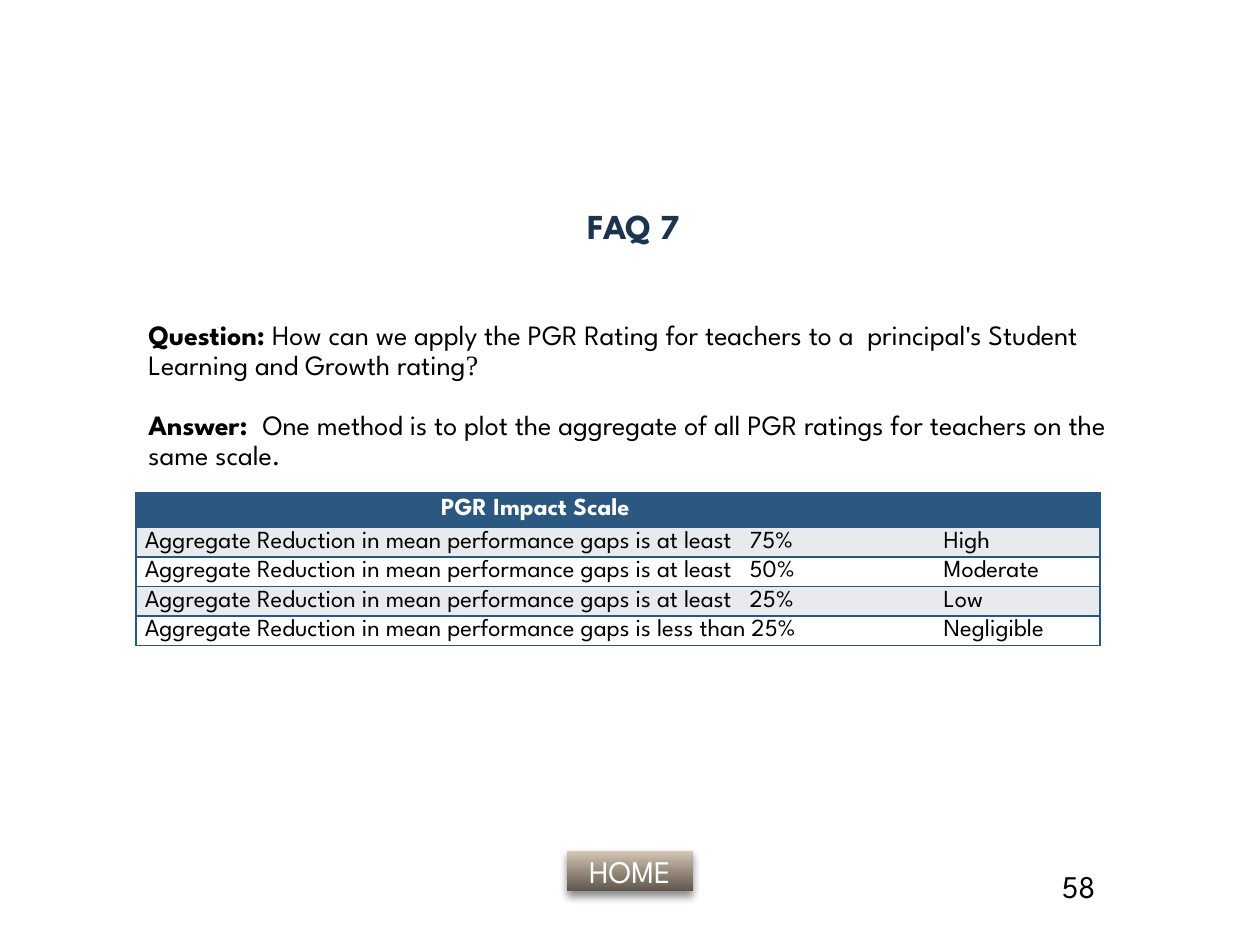
import pptx
import pptx.util
import pptx.dml.color
import pptx.enum.shapes
import pptx.enum.text
import pptx.oxml
from dataclasses import dataclass

Pt = pptx.util.Pt
Inches = pptx.util.Inches
ALIGN = pptx.enum.text.PP_ALIGN
ANCHOR = pptx.enum.text.MSO_ANCHOR
NS = 'xmlns:a="http://schemas.openxmlformats.org/drawingml/2006/main"'


@dataclass(frozen=True)
class Theme:
    font: str = "League Spartan"
    alt_font: str = "Times New Roman"
    black: str = "000000"
    white: str = "FFFFFF"
    navy: str = "1A354D"
    blue: str = "2B5880"
    band: str = "E8EAED"
    button: tuple = ((0, "5F574E"), (50, "988C7E"), (70, "B2A596"), (100, "D8CAB8"))
    title: int = 20
    label: int = 18
    body: int = 16
    cell: int = 14


class Deck:
    """Holds the theme and current slide; places are shares of the slide size."""

    def __init__(self, theme, width=10, height=7.5):
        self.t = theme
        self.prs = pptx.Presentation()
        self.prs.slide_width, self.prs.slide_height = Inches(width), Inches(height)
        self.s = self.prs.slides.add_slide(self.prs.slide_layouts[6])

    def box(self, x, y, w, h):
        W, H = self.prs.slide_width, self.prs.slide_height
        return int(x * W), int(y * H), int(w * W), int(h * H)

    def run(self, p, text, size, color, bold=False, font=None):
        r = p.add_run()
        r.text = text
        r.font.size, r.font.bold = Pt(size), bold
        r.font.name = font or self.t.font
        r.font.color.rgb = pptx.dml.color.RGBColor.from_string(color)

    def text(self, place, paragraphs, size, color, align=ALIGN.LEFT,
             anchor=ANCHOR.TOP, spacing=None, gap=0):
        tf = self.s.shapes.add_textbox(*self.box(*place)).text_frame
        tf.word_wrap, tf.vertical_anchor = True, anchor
        for i, runs in enumerate(paragraphs):
            p = tf.add_paragraph() if i else tf.paragraphs[0]
            p.alignment, p.line_spacing = align, spacing
            if i:
                p.space_before = Pt(gap)
            for text, *style in runs:
                self.run(p, text, size, color, *style)

    def button(self, place, label):
        sp = self.s.shapes.add_shape(
            pptx.enum.shapes.MSO_SHAPE.ACTION_BUTTON_CUSTOM, *self.box(*place))
        sp.line.fill.background()
        stops = "".join(f'<a:gs pos="{pos * 1000}"><a:srgbClr val="{c}"/></a:gs>'
                        for pos, c in self.t.button)
        sp.fill.background()
        props = sp.fill._xPr
        old = props.find(pptx.oxml.ns.qn("a:noFill"))
        props.replace(old, pptx.oxml.parse_xml(
            f'<a:gradFill {NS} rotWithShape="1"><a:gsLst>{stops}</a:gsLst>'
            '<a:lin ang="16200000" scaled="0"/></a:gradFill>'))
        props.append(pptx.oxml.parse_xml(
            f'<a:effectLst {NS}><a:outerShdw blurRad="{Pt(5)}" dist="{Pt(3)}" dir="5400000" '
            f'rotWithShape="0"><a:srgbClr val="{self.t.black}"><a:alpha val="45000"/>'
            '</a:srgbClr></a:outerShdw></a:effectLst>'))
        tf = sp.text_frame
        tf.vertical_anchor = ANCHOR.MIDDLE
        tf.paragraphs[0].alignment = ALIGN.CENTER
        self.run(tf.paragraphs[0], label, self.t.label, self.t.white)

    def borders(self, cell, sides):
        props = cell._tc.get_or_add_tcPr()
        for i, side in enumerate("LRTB"):
            fill = (f'<a:solidFill><a:srgbClr val="{self.t.blue}"/></a:solidFill>'
                    if side in sides else "<a:noFill/>")
            props.insert(i, pptx.oxml.parse_xml(
                f'<a:ln{side} {NS} w="{Pt(1)}">{fill}</a:ln{side}>'))

    def table(self, place, rows, widths, heights, tab):
        tbl = self.s.shapes.add_table(len(rows), len(widths), *self.box(*place)).table
        for col, w in zip(tbl.columns, widths):
            col.width = Inches(w)
        for i, values in enumerate(rows):
            tbl.rows[i].height = Inches(heights[min(i, 1)])
            fill = self.t.blue if i == 0 else self.t.band if i % 2 else self.t.white
            for j, value in enumerate(values):
                cell = tbl.cell(i, j)
                cell.fill.solid()
                cell.fill.fore_color.rgb = pptx.dml.color.RGBColor.from_string(fill)
                self.borders(cell, "RTB" if j else "LTB")
                cell.vertical_anchor = ANCHOR.MIDDLE
                cell.margin_left = cell.margin_right = Inches(0.07)
                cell.margin_top = cell.margin_bottom = 0
                p = cell.text_frame.paragraphs[0]
                p.alignment = ALIGN.LEFT if i else ALIGN.CENTER
                p.space_after = Pt(2)
                if "\t" in value:
                    p._p.get_or_add_pPr().append(pptx.oxml.parse_xml(
                        f'<a:tabLst {NS}><a:tab pos="{Inches(tab)}" algn="l"/></a:tabLst>'))
                p.font.size = Pt(self.t.cell)
                if value:
                    self.run(p, value, self.t.cell,
                             self.t.black if i else self.t.white, not i)


def main():
    t = Theme()
    d = Deck(t)

    # Home button
    d.button((0.45, 0.9, 0.1, 0.043), "HOME")

    # Title
    d.text((0.003, 0.177, 1, 0.123), [[("FAQ 7", True)]], t.title, t.navy,
           ALIGN.CENTER, ANCHOR.MIDDLE)

    # Question and answer
    d.text((0.108, 0.333, 0.825, 0.208), [
        [("Question: ", True),
         ("How can we apply the PGR Rating for teachers to a  principal's "
          "Student Learning and Growth rating",),
         ("?", False, t.alt_font)],
        [("Answer:  ", True),
         ("One method is to plot the aggregate of all PGR ratings for teachers "
          "on the same scale.",)],
    ], t.body, t.black, spacing=0.9, gap=17)

    # Impact scale
    stem = "Aggregate Reduction in mean performance gaps is "
    levels = [("at least\t75%", "High"), ("at least\t50%", "Moderate"),
              ("at least\t25%", "Low"), ("less than 25%", "Negligible")]
    rows = [("PGR Impact Scale", "")] + [(stem + limit, name) for limit, name in levels]
    d.table((0.108, 0.521, 0.765, 0.163), rows, (6.34, 1.31), (0.28, 0.22), 4.8)

    # Page number
    d.text((0.833, 0.911, 0.117, 0.069), [[("58",)]], t.label, t.black)

    d.prs.save("out.pptx")


if __name__ == "__main__":
    main()
